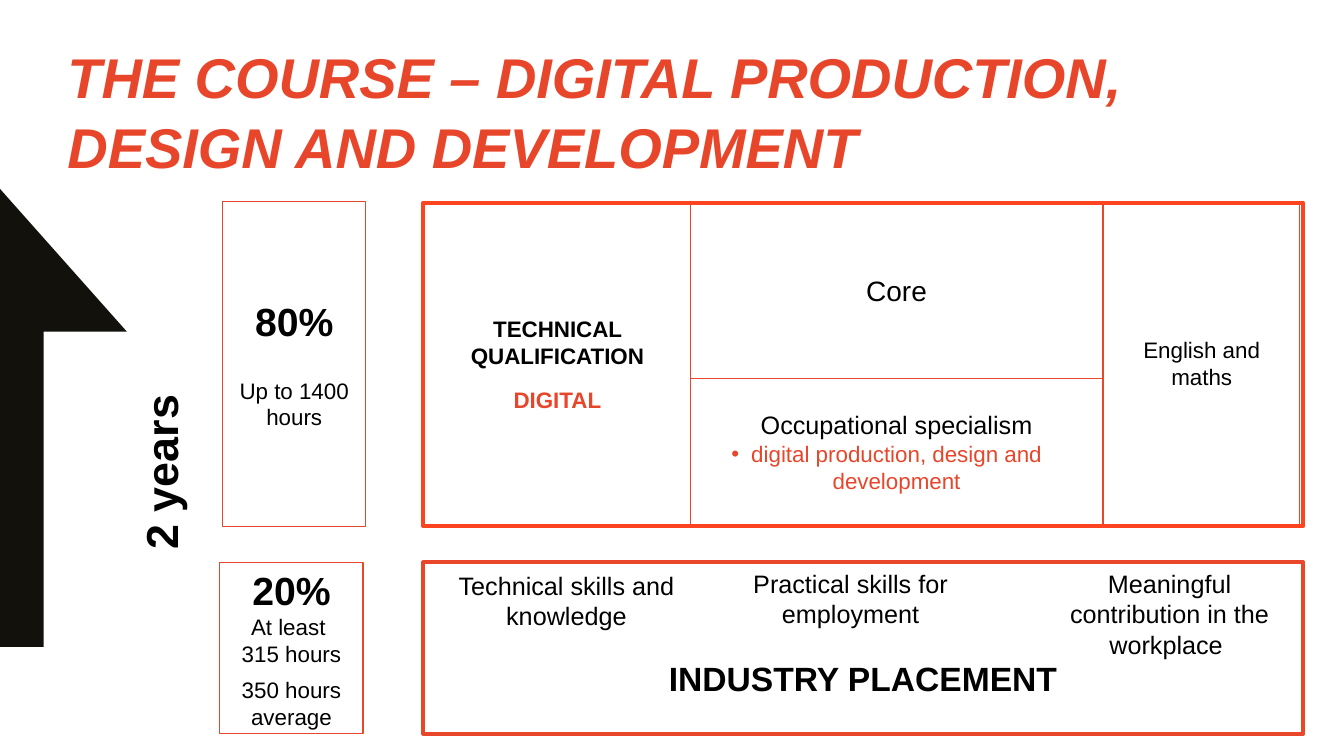
from dataclasses import dataclass
from typing import Optional

from lxml import etree
from pptx import Presentation
from pptx import util as u
from pptx.dml.color import RGBColor
from pptx.enum import shapes, text
from pptx.oxml.ns import qn

BLACK = RGBColor(0x00, 0x00, 0x00)
WHITE = RGBColor(0xFF, 0xFF, 0xFF)
ARROW_BLACK = RGBColor(0x12, 0x11, 0x0C)
ORANGE = RGBColor(0xE8, 0x46, 0x2B)
LINE_ORANGE = RGBColor(0xE8, 0x47, 0x2B)
FRAME_ORANGE = RGBColor(0xFC, 0x44, 0x21)
FONT = "Arial"
BULLET_INDENT = u.Cm(0.5)


@dataclass
class Line:
    """One paragraph of a box."""
    words: str
    size: int
    bold: bool = False
    italic: bool = False
    color: RGBColor = BLACK
    before: int = 0
    after: int = 0
    bullet: bool = False
    spacing: float = 1.0


@dataclass
class Box:
    """A rectangle or text box, measured in centimetres."""
    left: float
    top: float
    width: float
    height: float
    lines: tuple[Line, ...] = ()
    border: Optional[RGBColor] = None
    border_width: float = 0.75
    fill: Optional[RGBColor] = None
    middle: bool = True
    centred: bool = True
    rotation: int = 0


def add_bullet(paragraph) -> None:
    properties = paragraph._p.get_or_add_pPr()
    properties.set("marL", str(BULLET_INDENT))
    properties.set("marR", str(BULLET_INDENT))
    properties.set("indent", str(-BULLET_INDENT))
    etree.SubElement(properties, qn("a:buFont")).set("typeface", FONT)
    etree.SubElement(properties, qn("a:buChar")).set("char", "•")


def write_lines(frame, box: Box) -> None:
    frame.word_wrap = True
    frame.vertical_anchor = text.MSO_ANCHOR.MIDDLE if box.middle else text.MSO_ANCHOR.TOP
    frame.text = "\n".join(line.words for line in box.lines)
    for paragraph, line in zip(frame.paragraphs, box.lines):
        if line.bullet:
            add_bullet(paragraph)
        paragraph.alignment = text.PP_ALIGN.CENTER if box.centred else text.PP_ALIGN.LEFT
        paragraph.space_before = u.Pt(line.before)
        paragraph.space_after = u.Pt(line.after)
        paragraph.line_spacing = line.spacing
        for run in paragraph.runs:
            run.font.name = FONT
            run.font.size = u.Pt(line.size)
            run.font.bold = line.bold
            run.font.italic = line.italic
            run.font.color.rgb = line.color


def draw_box(slide, box: Box) -> None:
    place = [u.Cm(value) for value in (box.left, box.top, box.width, box.height)]
    if box.border is None and box.fill is None:
        shape = slide.shapes.add_textbox(*place)
    else:
        shape = slide.shapes.add_shape(shapes.MSO_SHAPE.RECTANGLE, *place)
        shape.shadow.inherit = False
        if box.fill is None:
            shape.fill.background()
        else:
            shape.fill.solid()
            shape.fill.fore_color.rgb = box.fill
        if box.border is None:
            shape.line.fill.background()
        else:
            shape.line.color.rgb = box.border
            shape.line.width = u.Pt(box.border_width)
    shape.rotation = box.rotation
    if box.lines:
        write_lines(shape.text_frame, box)


def draw_arrow(slide) -> None:
    """Right half of an upward arrow, cut off by the slide edge."""
    shaft, tip, head_base, foot = 1.1, 4.76, 8.36, 16.3
    outline = [(0, tip), (3.2, head_base), (shaft, head_base), (shaft, foot), (0, foot)]
    points = [(u.Cm(x), u.Cm(y)) for x, y in outline]
    builder = slide.shapes.build_freeform(*points[0])
    builder.add_line_segments(points[1:], close=True)
    arrow = builder.convert_to_shape()
    arrow.shadow.inherit = False
    arrow.fill.solid()
    arrow.fill.fore_color.rgb = ARROW_BLACK
    arrow.line.fill.background()


BOXES = [
    # Share of time
    Box(5.61, 5.08, 3.61, 8.18, (
        Line("80%", 28, bold=True),
        Line("Up to 1400 hours", 16, before=23),
    ), LINE_ORANGE),
    Box(5.54, 14.17, 3.61, 4.32, (
        Line("20%", 28, bold=True),
        Line("At least ", 16),
        Line("315 hours", 16, after=6),
        Line("350 hours average", 16),
    ), LINE_ORANGE),
    # Technical qualification
    Box(10.67, 5.08, 6.76, 8.18, (
        Line("TECHNICAL QUALIFICATION", 16, bold=True, after=6),
        Line("DIGITAL", 16, bold=True, color=ORANGE, before=6, after=6),
    )),
    Box(17.4, 5.11, 10.39, 4.42, (Line("Core", 20),), LINE_ORANGE),
    Box(17.4, 9.53, 10.39, 3.71, (
        Line("Occupational specialism", 18),
        Line("digital production, design and development", 16, color=ORANGE, bullet=True),
    ), LINE_ORANGE),
    Box(27.81, 5.08, 4.95, 8.15, (Line("English and maths", 16),), LINE_ORANGE),
    Box(-2.49, 11.3, 13.06, 1.19, (Line("2 years", 32, bold=True),), rotation=270),
    Box(10.67, 5.11, 22.17, 8.15, border=FRAME_ORANGE, border_width=3),
    # Industry placement
    Box(10.82, 14.25, 6.91, 2.11, (Line("Technical skills and knowledge", 18),), middle=False),
    Box(17.93, 14.2, 7.01, 2.06, (Line("Practical skills for employment", 18),), middle=False),
    Box(10.97, 16.64, 21.79, 0.89, (Line("INDUSTRY PLACEMENT ", 24, bold=True),), fill=WHITE),
    Box(10.67, 14.17, 22.17, 4.32, border=LINE_ORANGE, border_width=3),
    Box(26.21, 14.2, 6.53, 2.97,
        (Line("Meaningful contribution in the workplace ", 18),), middle=False),
    # Title
    Box(1.45, 0.97, 32.23, 3.61, (
        Line("THE COURSE – DIGITAL PRODUCTION, DESIGN AND DEVELOPMENT", 40,
             bold=True, italic=True, color=ORANGE, spacing=1.04),
    ), centred=False),
]


def main() -> None:
    presentation = Presentation()
    presentation.slide_width = u.Cm(33.87)
    presentation.slide_height = u.Cm(19.05)
    slide = presentation.slides.add_slide(presentation.slide_layouts[6])
    draw_arrow(slide)
    for box in BOXES:
        draw_box(slide, box)
    presentation.save("out.pptx")


if __name__ == "__main__":
    main()
